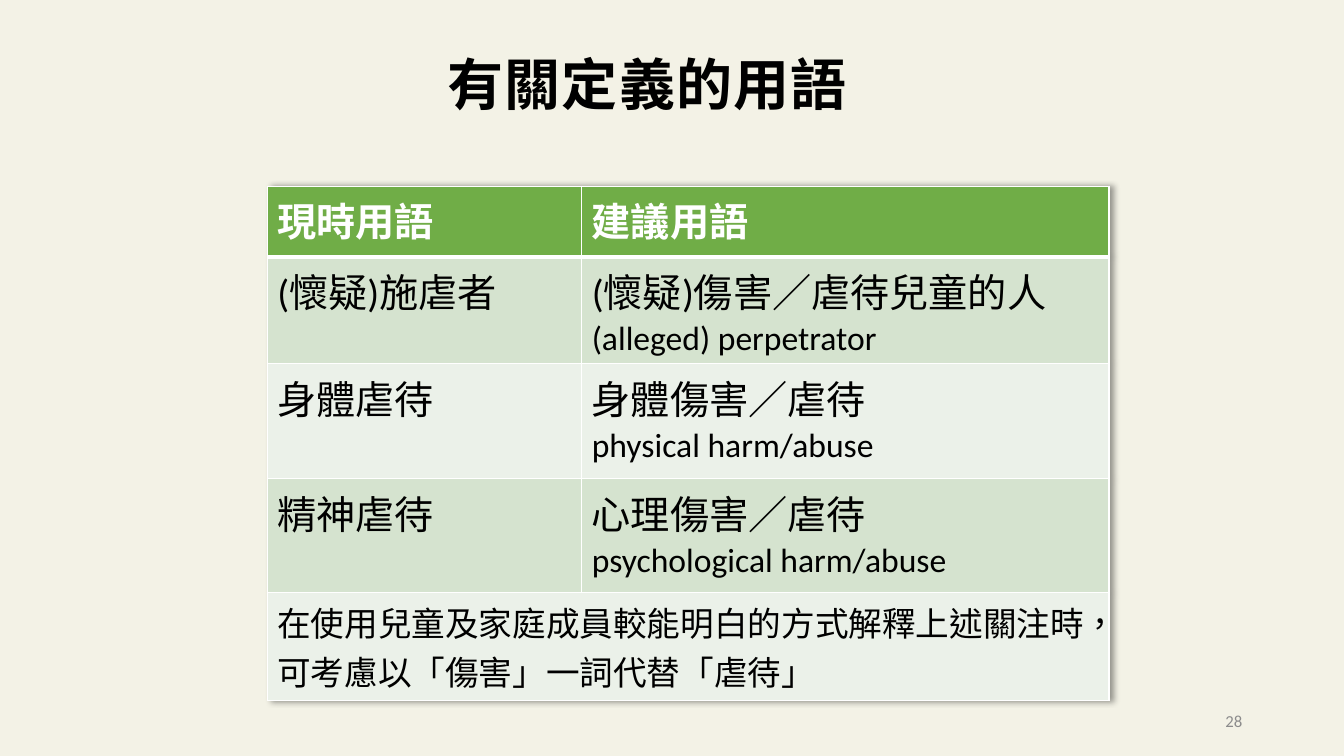
from pptx import Presentation
from pptx.dml.color import RGBColor
from pptx.enum.lang import MSO_LANGUAGE_ID as Language
from pptx.enum.text import MSO_ANCHOR as Anchor, PP_ALIGN as Align
from pptx.oxml import parse_xml
from pptx.oxml.ns import nsdecls
from pptx.util import Inches, Pt

TITLE = "有關定義的用語"
PAGE_NUMBER = "28"
HEADER = ("現時用語", "建議用語")
TERMS = [
    ("(懷疑)施虐者", "(懷疑)傷害／虐待兒童的人", "(alleged) perpetrator"),
    ("身體虐待", "身體傷害／虐待", "physical harm/abuse"),
    ("精神虐待", "心理傷害／虐待", "psychological harm/abuse"),
]
NOTE = "在使用兒童及家庭成員較能明白的方式解釋上述關注時，可考慮以「傷害」一詞代替「虐待」"

THEME = {
    "font": "Calibri",
    "background": "F3F2E6",
    "header": "70AD47",
    "bands": ("D5E3CF", "EBF1E9"),
    "white": "FFFFFF",
    "text": "000000",
    "muted": "8C8C8C",
    "title_size": 40,
    "term_size": 28,
    "english_size": 24,
    "number_size": 12,
}
SLIDE_SIZE = (13.33, 7.5)
TITLE_BOX = (1.92, 0.24, 9, 1.25)
NUMBER_BOX = (9.42, 6.95, 3, 0.4)
TABLE_ORIGIN = (2.65, 1.85)
COLUMNS = (3.12, 5.23)
ROWS = (0.7, 1.06, 1.14, 1.13, 1.07)
THIN, THICK = 1, 3


def color(name):
    return RGBColor.from_string(name)


def write(paragraph, text, size, ink=THEME["text"], bold=False):
    run = paragraph.add_run()
    run.text = text
    values = {
        "name": THEME["font"],
        "size": Pt(size),
        "bold": bold,
        "language_id": Language.ENGLISH_US if text.isascii() else Language.TRADITIONAL_CHINESE,
    }
    for attribute, value in values.items():
        setattr(run.font, attribute, value)
    run.font.color.rgb = color(ink)
    return run


def add_text(slide, box, text, size, align, **style):
    frame = slide.shapes.add_textbox(*map(Inches, box)).text_frame
    frame.word_wrap = True
    frame.vertical_anchor = Anchor.MIDDLE
    paragraph = frame.paragraphs[0]
    paragraph.alignment = align
    return paragraph, write(paragraph, text, size, **style)


def format_cell(cell, fill, top, bottom):
    properties = cell._tc.get_or_add_tcPr()
    for side, width in {"L": THIN, "R": THIN, "T": top, "B": bottom}.items():
        properties.append(parse_xml(
            f'<a:ln{side} {nsdecls("a")} w="{Pt(width)}"><a:solidFill>'
            f'<a:srgbClr val="{THEME["white"]}"/></a:solidFill></a:ln{side}>'
        ))
    cell.fill.solid()
    cell.fill.fore_color.rgb = color(fill)


def fill_cell(cell, lines, **style):
    for index, (text, size) in enumerate(lines):
        frame = cell.text_frame
        paragraph = frame.add_paragraph() if index else frame.paragraphs[0]
        write(paragraph, text, size, **style)


def add_terms_table(slide):
    size = (sum(COLUMNS), sum(ROWS))
    frame = slide.shapes.add_table(len(ROWS), len(COLUMNS), *map(Inches, TABLE_ORIGIN + size))
    table = frame.table
    for column, width in zip(table.columns, COLUMNS):
        column.width = Inches(width)
    for row, height in zip(table.rows, ROWS):
        row.height = Inches(height)
    table._tbl.tblPr.insert(0, parse_xml(
        f'<a:effectLst {nsdecls("a")}><a:outerShdw blurRad="50800" dist="38100" '
        'dir="0" algn="l" rotWithShape="0"><a:prstClr val="black">'
        '<a:alpha val="40000"/></a:prstClr></a:outerShdw></a:effectLst>'
    ))
    for index, row in enumerate(table.rows):
        fill = THEME["bands"][(index - 1) % 2] if index else THEME["header"]
        for cell in row.cells:
            format_cell(cell, fill, THICK if index == 1 else THIN, THIN if index else THICK)

    term_size, english_size = THEME["term_size"], THEME["english_size"]
    for column, label in enumerate(HEADER):
        fill_cell(table.cell(0, column), [(label, term_size)], ink=THEME["white"], bold=True)
    for row, (current, suggested, english) in enumerate(TERMS, 1):
        fill_cell(table.cell(row, 0), [(current, term_size)])
        fill_cell(table.cell(row, 1), [(suggested, term_size), (english, english_size)])
    last = len(ROWS) - 1
    table.cell(last, 0).merge(table.cell(last, 1))
    fill_cell(table.cell(last, 0), [(NOTE, english_size)])


def main():
    presentation = Presentation()
    presentation.slide_width, presentation.slide_height = map(Inches, SLIDE_SIZE)
    slide = presentation.slides.add_slide(presentation.slide_layouts[6])
    slide.background.fill.solid()
    slide.background.fill.fore_color.rgb = color(THEME["background"])
    paragraph, run = add_text(slide, TITLE_BOX, TITLE, THEME["title_size"], Align.CENTER, bold=True)
    paragraph.line_spacing = 0.9
    run.font._element.set("spc", "100")
    add_terms_table(slide)
    add_text(slide, NUMBER_BOX, PAGE_NUMBER, THEME["number_size"], Align.RIGHT, ink=THEME["muted"])
    presentation.save("out.pptx")


if __name__ == "__main__":
    main()
